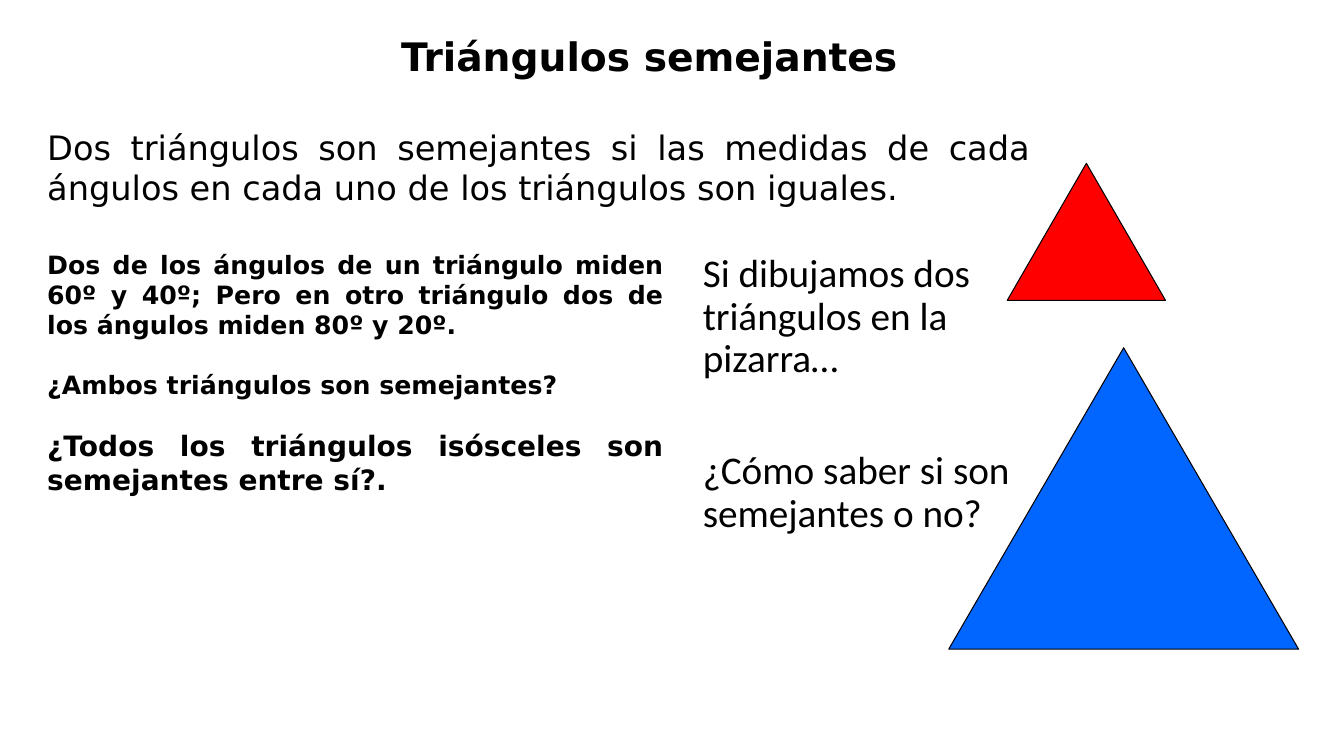
import pptx
import pptx.util
import pptx.dml.color
import pptx.enum.shapes
import pptx.enum.text
from dataclasses import dataclass
from lxml import etree
from pptx.util import Inches

ALIGN = pptx.enum.text.PP_ALIGN


@dataclass(frozen=True)
class Theme:
    ink: str = "000000"
    red: str = "FF0000"
    blue: str = "0066FF"
    sans: str = "DejaVu Sans"
    plain: str = "Calibri"
    head: int = 28
    lead: int = 24
    task: int = 18
    last: int = 20
    body: int = 28
    edge: float = 0.75


THEME = Theme()


def color(code):
    return pptx.dml.color.RGBColor.from_string(code)


def place(shape, box):
    shape.left, shape.top, shape.width, shape.height = map(Inches, box)


def write(shape, lines, sizes, font, align, bold=False, gap=0, pitch=1.0):
    frame = shape.text_frame
    frame.text = "\n".join(lines)
    frame.word_wrap = True
    frame.auto_size = pptx.enum.text.MSO_AUTO_SIZE.NONE
    frame.vertical_anchor = pptx.enum.text.MSO_ANCHOR.TOP
    for rank, (para, size) in enumerate(zip(frame.paragraphs, sizes)):
        para.alignment = align
        para.line_spacing = pitch
        para.space_before = pptx.util.Pt(gap if rank else 0)
        for run in para.runs:
            run.font.name = font
            run.font.size = pptx.util.Pt(size)
            run.font.bold = bold
            run.font.color.rgb = color(THEME.ink)


def clear_bullets(shape):
    for para in shape.text_frame.paragraphs:
        props = para._p.get_or_add_pPr()
        props.set("marL", "0")
        props.set("indent", "0")
        etree.SubElement(props, pptx.oxml.ns.qn("a:buNone"))


def add_text(slide, box, *args, **style):
    shape = slide.shapes.add_textbox(*map(Inches, box))
    write(shape, *args, **style)


def add_triangle(slide, box, fill):
    kind = pptx.enum.shapes.MSO_SHAPE.ISOSCELES_TRIANGLE
    shape = slide.shapes.add_shape(kind, *map(Inches, box))
    shape.shadow.inherit = False
    shape.fill.solid()
    shape.fill.fore_color.rgb = color(fill)
    shape.line.color.rgb = color(THEME.ink)
    shape.line.width = pptx.util.Pt(THEME.edge)


def main():
    deck = pptx.Presentation()
    deck.slide_width = Inches(13.33)
    deck.slide_height = Inches(7.5)
    slide = deck.slides.add_slide(deck.slide_layouts[1])

    title = slide.shapes.title
    place(title, (0.71, 0.27, 11.46, 0.91))
    write(title, ["Triángulos semejantes"], [THEME.head], THEME.sans,
          ALIGN.CENTER, bold=True)

    body = slide.placeholders[1]
    place(body, (6.87, 2.47, 3.86, 4.41))
    write(body, ["Si dibujamos dos triángulos en la pizarra…",
                 "¿Cómo saber si son semejantes o no?"],
          [THEME.body] * 2, THEME.plain, ALIGN.LEFT, gap=50, pitch=0.9)
    clear_bullets(body)

    add_triangle(slide, (9.99, 1.62, 1.57, 1.36), THEME.red)
    add_triangle(slide, (9.41, 3.45, 3.47, 2.99), THEME.blue)

    add_text(slide, (0.37, 2.42, 6.31, 2.59),
             ["Dos de los ángulos de un triángulo miden 60º y 40º; Pero en "
              "otro triángulo dos de los ángulos miden 80º y 20º.",
              "¿Ambos triángulos son semejantes?",
              "¿Todos los triángulos isósceles son semejantes entre sí?."],
             [THEME.task, THEME.task, THEME.last], THEME.sans,
             ALIGN.JUSTIFY, bold=True, gap=21)
    add_text(slide, (0.37, 1.21, 9.95, 0.91),
             ["Dos triángulos son semejantes si las medidas de cada ángulos "
              "en cada uno de los triángulos son iguales."],
             [THEME.lead], THEME.sans, ALIGN.JUSTIFY)

    deck.save("out.pptx")


if __name__ == "__main__":
    main()
